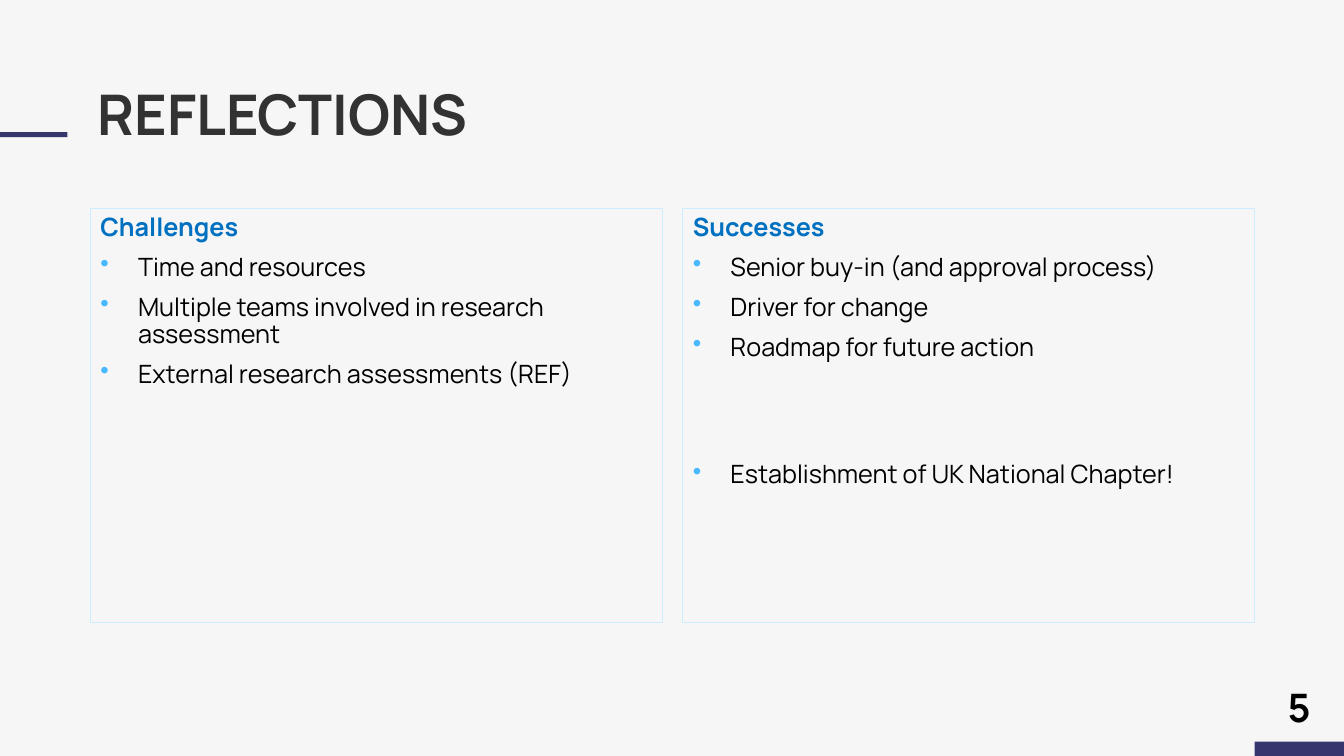
"""Build the Reflections slide."""
import dataclasses

import lxml.etree
import pptx
import pptx.dml.color
import pptx.enum.shapes
import pptx.enum.text
import pptx.oxml.ns
import pptx.util

Cm = pptx.util.Cm
Pt = pptx.util.Pt
qn = pptx.oxml.ns.qn
Anchor = pptx.enum.text.MSO_ANCHOR


@dataclasses.dataclass(frozen=True)
class Theme:
    """Hold the colours, font and type sizes."""
    navy: str = "0F0F55"
    veil: str = "D3D3D3"
    title: str = "323232"
    head: str = "0070C0"
    text: str = "000000"
    dot: str = "48B9FF"
    frame: str = "CCECFF"
    font: str = "Manrope"
    big: int = 40
    body: int = 18
    page: int = 28


THEME = Theme()
WIDE, HIGH = 33.87, 19.05


def tint(code):
    """Return a colour from its hex code."""
    return pptx.dml.color.RGBColor.from_string(code)


def style(para, size, color, bold=False):
    """Set the font of a paragraph."""
    font = para.font
    font.name, font.size, font.bold = THEME.font, Pt(size), bold
    font.color.rgb = tint(color)


def block(slide, box, color, alpha=None):
    """Add a plain filled rectangle."""
    kind = pptx.enum.shapes.MSO_SHAPE.RECTANGLE
    shape = slide.shapes.add_shape(kind, *map(Cm, box))
    shape.shadow.inherit = False
    shape.line.fill.background()
    shape.fill.solid()
    shape.fill.fore_color.rgb = tint(color)
    if alpha:
        clr = shape.fill._xPr.find(".//" + qn("a:srgbClr"))
        lxml.etree.SubElement(clr, qn("a:alpha"), val=str(alpha * 1000))


def area(slide, box, anchor=Anchor.TOP):
    """Add a wrapping text box."""
    shape = slide.shapes.add_textbox(*map(Cm, box))
    frame = shape.text_frame
    frame.word_wrap = True
    frame.vertical_anchor = anchor
    return shape, frame


def bullet(para):
    """Give a paragraph a coloured dot and a hanging indent."""
    props = para._p.get_or_add_pPr()
    props.set("marL", str(Cm(0.95)))
    props.set("indent", str(-Cm(0.95)))
    color = lxml.etree.SubElement(props, qn("a:buClr"))
    lxml.etree.SubElement(color, qn("a:srgbClr"), val=THEME.dot)
    lxml.etree.SubElement(props, qn("a:buChar"), char="•")


def decor(slide, box):
    """Add the two accent bars and the veil over the page."""
    left, top, width, height = box
    block(slide, (left + width - 2.25, top + height - 0.36, 2.25, 0.36), THEME.navy)
    block(slide, (left, top + 3.33, 1.7, 0.13), THEME.navy)
    block(slide, box, THEME.veil, 20)


def title(slide, box, text):
    """Add the slide title."""
    _, frame = area(slide, box)
    frame.margin_left, frame.margin_top = Cm(0.2), 0
    para = frame.paragraphs[0]
    para.text = text
    style(para, THEME.big, THEME.title, True)


def panel(slide, box, head, items):
    """Add a framed list of (text, space before) items under a heading."""
    shape, frame = area(slide, box)
    shape.line.color.rgb = tint(THEME.frame)
    shape.line.width = Pt(0.75)
    frame.margin_top = Cm(0.16)
    first = frame.paragraphs[0]
    first.text = head
    style(first, THEME.body, THEME.head, True)
    for text, gap in items:
        para = frame.add_paragraph()
        para.text = text
        bullet(para)
        para.space_before = Pt(gap)
        style(para, THEME.body, THEME.text)
    for para in frame.paragraphs:
        para.line_spacing = 0.88
        para.space_after = Pt(6)


def number(slide, box, text):
    """Add the page number."""
    _, frame = area(slide, box, Anchor.MIDDLE)
    para = frame.paragraphs[0]
    para.text = text
    para.alignment = pptx.enum.text.PP_ALIGN.RIGHT
    style(para, THEME.page, THEME.text, True)


def columns(slide, box, lists, gap=0.52):
    """Split the box into equal panels."""
    left, top, width, height = box
    each = (width - gap * (len(lists) - 1)) / len(lists)
    for pos, (head, items) in enumerate(lists):
        panel(slide, (left + pos * (each + gap), top, each, height), head, items)


def main():
    """Build and save the deck."""
    deck = pptx.Presentation()
    deck.slide_width, deck.slide_height = Cm(WIDE), Cm(HIGH)
    slide = deck.slides.add_slide(deck.slide_layouts[6])
    decor(slide, (0, 0, WIDE, HIGH))
    title(slide, (2.26, 2, 29.36, 3.25), "REFLECTIONS")
    near, far = 3.6, 66
    columns(slide, (2.28, 5.26, 29.34, 10.42), [
        ("Challenges", [
            ("Time and resources", near),
            ("Multiple teams involved in research assessment", near),
            ("External research assessments (REF)", near),
        ]),
        ("Successes", [
            ("Senior buy-in (and approval process)", near),
            ("Driver for change", near),
            ("Roadmap for future action", near),
            ("Establishment of UK National Chapter!", far),
        ]),
    ])
    number(slide, (30.33, 17.12, 2.95, 1.37), "5")
    deck.save("out.pptx")


if __name__ == "__main__":
    main()
